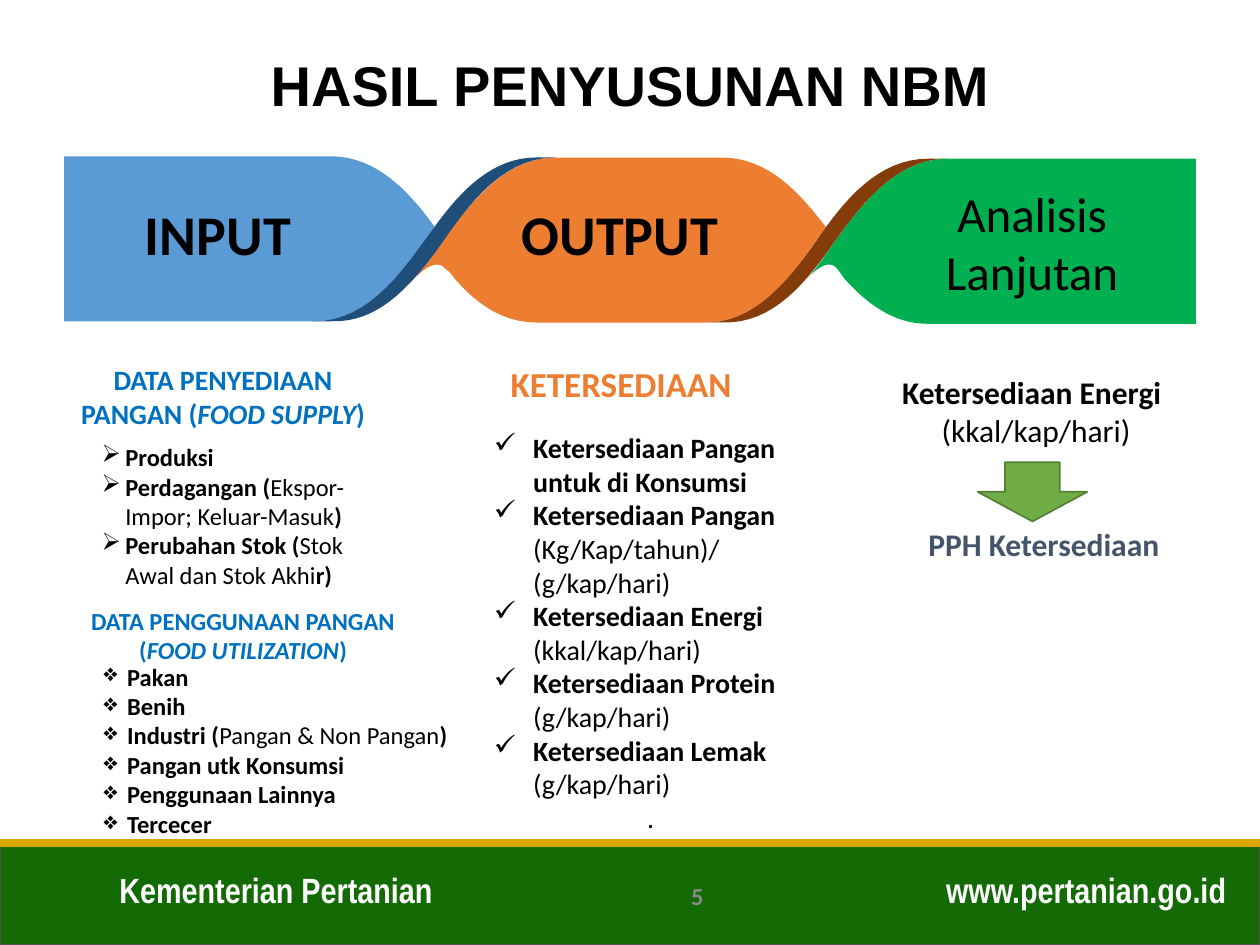
"""Build the slide on the results of compiling the food balance sheet."""
from dataclasses import dataclass

from lxml.etree import SubElement
from pptx import Presentation
from pptx.dml.color import RGBColor
from pptx.enum.shapes import MSO_CONNECTOR, MSO_SHAPE
from pptx.enum.text import MSO_ANCHOR, PP_ALIGN
from pptx.oxml.ns import qn
from pptx.shapes.autoshape import Shape
from pptx.slide import Slide
from pptx.util import Pt

BLACK = RGBColor(0x00, 0x00, 0x00)
WHITE = RGBColor(0xFF, 0xFF, 0xFF)
GREY = RGBColor(0x89, 0x89, 0x89)
SLATE = RGBColor(0x44, 0x54, 0x6A)
HEADING_BLUE = RGBColor(0x00, 0x70, 0xC0)
BLUE = RGBColor(0x5B, 0x9B, 0xD5)
NAVY = RGBColor(0x1F, 0x4E, 0x79)
ORANGE = RGBColor(0xED, 0x7D, 0x31)
BROWN = RGBColor(0x84, 0x3C, 0x0B)
GREEN = RGBColor(0x00, 0xB0, 0x50)
ARROW_FILL = RGBColor(0x70, 0xAD, 0x47)
ARROW_LINE = RGBColor(0x53, 0x80, 0x35)
FOOTER_FILL = RGBColor(0x14, 0x6B, 0x05)
FOOTER_LINE = RGBColor(0x52, 0x52, 0x52)
GOLD = RGBColor(0xDA, 0xA6, 0x00)

LEFT, CENTER, RIGHT = PP_ALIGN.LEFT, PP_ALIGN.CENTER, PP_ALIGN.RIGHT
TOP, MIDDLE = MSO_ANCHOR.TOP, MSO_ANCHOR.MIDDLE
PAGE_WIDTH, PAGE_HEIGHT, FOOTER_TOP = 720, 540, 481.7
CURVE_STEPS = 16

Point = tuple[float, float]


@dataclass
class Span:
    text: str
    bold: bool = True
    italic: bool = False
    color: RGBColor | None = None


@dataclass
class Para:
    spans: list[Span]
    align: PP_ALIGN = LEFT
    margin: float = 0
    hanging: float = 0
    bullet: str = ""
    before: float = 0


@dataclass
class Box:
    frame: tuple[float, float, float, float]
    paras: list[Para]
    size: float
    color: RGBColor = BLACK
    font: str = "Calibri"
    anchor: MSO_ANCHOR = TOP
    inset: tuple[float, float] = (0, 0)


@dataclass
class Ribbon:
    color: RGBColor
    start: Point
    segments: list[tuple[Point, ...]]


def label(text: str, align: PP_ALIGN = CENTER, bold: bool = True) -> list[Para]:
    return [Para([Span(text, bold)], align)]


def food_heading(text: str, term: str) -> list[Para]:
    return [Para([Span(f"{text} ("), Span(term, italic=True), Span(")")], CENTER)]


def bulleted(bullet: str, margin: float, hanging: float, *items: tuple[str, ...]) -> list[Para]:
    return [Para([Span(text, index % 2 == 0) for index, text in enumerate(item)],
                 margin=margin, hanging=hanging, bullet=bullet) for item in items]


def availability(name: str, unit: str) -> list[Para]:
    return [*bulleted("✓", 22.5, 22.5, (f"Ketersediaan {name}",)),
            Para([Span(unit, False)], margin=22.5)]


RIBBONS = [
    Ribbon(GREEN, (683.3, 90.7), [
        ((541.4, 90.7),),
        ((513.4, 90.7), (493.9, 114.5), (477.4, 137.5)),
        ((470.2, 148.3), (465.1, 154.8), (461.5, 159.1)),
        ((465.1, 154.8), (473.8, 146.9), (478.8, 154.1)),
        ((479.5, 154.8), (481, 157), (482.4, 159.1)),
        ((495.4, 173.5), (510.5, 185), (529.9, 185)),
        ((683.3, 185),)]),
    Ribbon(BLUE, (248.4, 129.6), [
        ((233.3, 108.7), (215.3, 90), (190.1, 89.3)),
        ((36.7, 89.3),), ((36.7, 183.6),), ((178.6, 183.6),),
        ((212.4, 184.3), (232.6, 150.5), (248.4, 129.6))]),
    Ribbon(ORANGE, (472.3, 130.3), [
        ((456.5, 109.4), (439.2, 90.7), (413.3, 90)),
        ((317.5, 90),),
        ((289.4, 90), (270.7, 113.8), (253.4, 136.8)),
        ((248.4, 144.7),), ((237.6, 158.4),),
        ((241.2, 154.8), (249.8, 146.9), (254.9, 154.1)),
        ((255.6, 154.1), (257.8, 156.2), (259.2, 158.4)),
        ((271.4, 172.8), (286.6, 184.3), (306.7, 184.3)),
        ((402.5, 184.3),),
        ((436.3, 185), (455.8, 151.9), (471.6, 130.3))]),
    Ribbon(BROWN, (530.6, 90.7), [
        ((501.8, 90.7), (482.4, 114.5), (466.6, 137.5)),
        ((450, 161.3), (430.6, 185), (402.5, 184.3)),
        ((413.3, 184.3),),
        ((442.1, 185), (460.8, 161.3), (477.4, 137.5)),
        ((493.9, 114.5), (513.4, 90.7), (541.4, 90.7))]),
    Ribbon(NAVY, (306.7, 90), [
        ((281.5, 90), (263.5, 108.7), (248.4, 129.6)),
        ((232.6, 150.5), (212.4, 184.3), (178.6, 183.6)),
        ((190.1, 183.6),),
        ((215.3, 184.3), (233.3, 164.9), (248.4, 144.7)),
        ((263.5, 123.8), (283.7, 90), (317.5, 90))]),
]

BOXES = [
    Box((61.2, 492.5, 263.5, 31.7), label("Kementerian Pertanian", LEFT), 20, WHITE,
        "Arial Narrow", inset=(7.2, 3.6)),
    Box((507.6, 492.5, 200.2, 31.7), label("www.pertanian.go.id", RIGHT), 20, WHITE,
        "Arial Narrow", inset=(7.2, 3.6)),
    Box((49.7, 28.8, 620.6, 38.9), label("HASIL PENYUSUNAN NBM"), 32, BLACK, "Arial",
        MIDDLE, (7.2, 3.6)),
    Box((317.5, 497.5, 162, 28.8), label("5"), 14, GREY, anchor=MIDDLE, inset=(7.2, 3.6)),
    Box((76.3, 113.8, 96.5, 38.9), label("INPUT"), 32, anchor=MIDDLE),
    Box((290.9, 113.8, 126.7, 38.9), label("OUTPUT"), 32, anchor=MIDDLE),
    Box((518.4, 104.4, 142.6, 67.7), label("Analisis Lanjutan", bold=False), 28, anchor=MIDDLE),
    Box((44.6, 252.7, 162, 85), bulleted(
        "➢", 27, 13.5, ("Produksi",),
        ("Perdagangan (", "Ekspor-Impor; Keluar-Masuk", ")"),
        ("Perubahan Stok (", "Stok Awal dan Stok Akhi", "r)")), 14),
    Box((282.2, 246.2, 179.3, 232.6), [
        *bulleted("✓", 22.5, 22.5, ("Ketersediaan Pangan untuk di Konsumsi",)),
        *availability("Pangan", "(Kg/Kap/tahun)/ (g/kap/hari)"),
        *availability("Energi", "(kkal/kap/hari)"),
        *availability("Protein", "(g/kap/hari)"),
        *availability("Lemak", "(g/kap/hari)"),
        *label(".", bold=False)], 16),
    Box((36.7, 207.4, 181.4, 38.9), food_heading("DATA PENYEDIAAN PANGAN", "FOOD SUPPLY"),
        16, HEADING_BLUE),
    Box((259.9, 207.4, 190.1, 24.5), label("KETERSEDIAAN"), 20, ORANGE),
    Box((515.5, 213.1, 162, 108.7), [
        Para([Span("Ketersediaan Energi")]),
        Para([Span("(kkal/kap/hari)", False)], margin=22.5),
        Para([Span("PPH Ketersediaan", color=SLATE)], CENTER, before=43.9)], 18),
    Box((49.7, 378, 208.8, 101.5), bulleted(
        "❖", 23, 13.5, ("Pakan",), ("Benih",), ("Industri (", "Pangan & Non Pangan", ")"),
        ("Pangan utk Konsumsi",), ("Penggunaan Lainnya",), ("Tercecer",)), 14),
    Box((44.6, 346.3, 188.6, 33.8), food_heading("DATA PENGGUNAAN PANGAN", "FOOD UTILIZATION"),
        14, HEADING_BLUE),
]


def apply(target: object, formats: dict[str, object]) -> None:
    for name, value in formats.items():
        setattr(target, name, value)


def paint(shape: Shape, fill: RGBColor, line: RGBColor | None = None) -> None:
    shape.shadow.inherit = False
    shape.fill.solid()
    shape.fill.fore_color.rgb = fill
    if line is None:
        shape.line.fill.background()
    else:
        shape.line.color.rgb = line
        shape.line.width = Pt(1)


def curve(start: Point, first: Point, second: Point, end: Point) -> list[Point]:
    steps = [step / CURVE_STEPS for step in range(1, CURVE_STEPS + 1)]
    return [tuple((1 - t) ** 3 * a + 3 * t * (1 - t) ** 2 * b + 3 * t * t * (1 - t) * c + t ** 3 * d
                  for a, b, c, d in zip(start, first, second, end)) for t in steps]


def draw_ribbon(page: Slide, ribbon: Ribbon) -> None:
    points = [ribbon.start]
    for segment in ribbon.segments:
        points += curve(points[-1], *segment) if len(segment) == 3 else segment
    corners = [(Pt(x), Pt(y)) for x, y in points]
    builder = page.shapes.build_freeform(*corners[0])
    builder.add_line_segments(corners[1:], close=True)
    paint(builder.convert_to_shape(), ribbon.color)


def draw_box(page: Slide, box: Box) -> None:
    frame = page.shapes.add_textbox(*map(Pt, box.frame)).text_frame
    across, down = map(Pt, box.inset)
    apply(frame, {"word_wrap": True, "vertical_anchor": box.anchor, "margin_left": across,
                  "margin_right": across, "margin_top": down, "margin_bottom": down})
    for index, para in enumerate(box.paras):
        paragraph = frame.add_paragraph() if index else frame.paragraphs[0]
        apply(paragraph, {"alignment": para.align, "space_before": Pt(para.before)})
        properties = paragraph._p.get_or_add_pPr()
        properties.set("marL", str(Pt(para.margin)))
        properties.set("indent", str(Pt(-para.hanging)))
        if para.bullet:
            SubElement(properties, qn("a:buChar")).set("char", para.bullet)
        for span in para.spans:
            run = paragraph.add_run()
            run.text = span.text
            apply(run.font, {"name": box.font, "size": Pt(box.size),
                             "bold": span.bold, "italic": span.italic})
            run.font.color.rgb = span.color or box.color


def draw_footer(page: Slide) -> None:
    band = page.shapes.add_shape(MSO_SHAPE.RECTANGLE, 0, Pt(FOOTER_TOP), Pt(PAGE_WIDTH),
                                 Pt(PAGE_HEIGHT - FOOTER_TOP))
    paint(band, FOOTER_FILL, FOOTER_LINE)
    edge = page.shapes.add_connector(MSO_CONNECTOR.STRAIGHT, 0, Pt(FOOTER_TOP),
                                     Pt(PAGE_WIDTH), Pt(FOOTER_TOP))
    edge.line.color.rgb = GOLD
    edge.line.width = Pt(4.5)
    SubElement(edge._element.spPr, qn("a:effectLst"))


def main() -> None:
    deck = Presentation()
    apply(deck, {"slide_width": Pt(PAGE_WIDTH), "slide_height": Pt(PAGE_HEIGHT)})
    page = deck.slides.add_slide(deck.slide_layouts[6])
    draw_footer(page)
    for ribbon in RIBBONS:
        draw_ribbon(page, ribbon)
    for box in BOXES:
        draw_box(page, box)
    arrow = page.shapes.add_shape(MSO_SHAPE.DOWN_ARROW, Pt(558.7), Pt(264.2), Pt(62.6), Pt(33.8))
    paint(arrow, ARROW_FILL, ARROW_LINE)
    deck.save("out.pptx")


if __name__ == "__main__":
    main()
